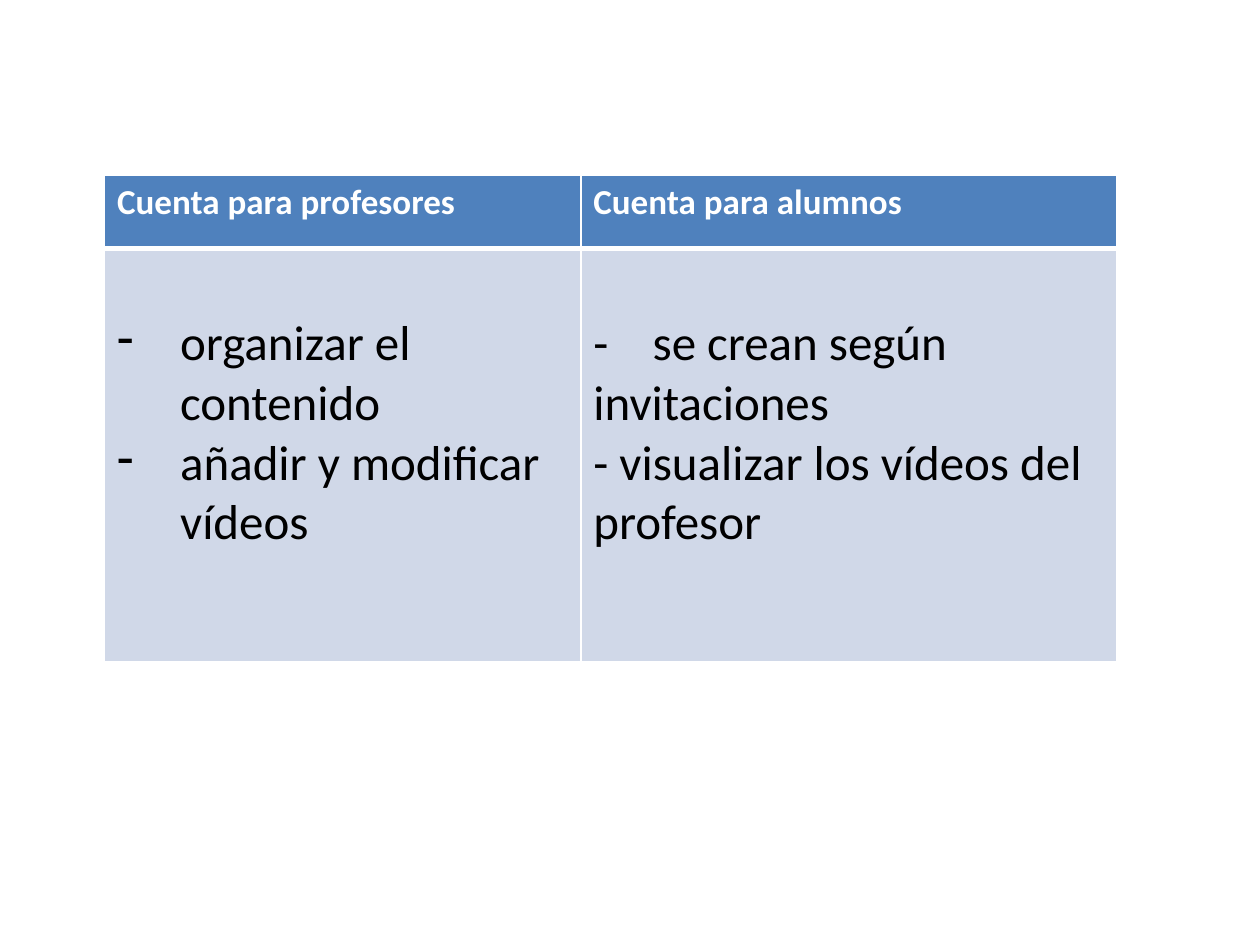
from lxml.etree import SubElement as Sub
from pptx import Presentation
from pptx.dml.color import RGBColor as Rgb
from pptx.oxml import parse_xml
from pptx.oxml.ns import qn, nsdecls
from pptx.util import Inches, Pt

HUE = {"head": "4F81BD", "body": "D0D8E8", "white": "FFFFFF", "black": "000000"}
COLS, ROWS = (3.78, 4.25), (0.58, 3.28)
HEADS = ["Cuenta para profesores", "Cuenta para alumnos"]
# Each item: text, kind of indent
LISTS = [
    [("organizar el contenido", "bullet"), ("añadir y modificar vídeos", "bullet")],
    [("-\tse crean según invitaciones", "tab"),
     ("- visualizar los vídeos del profesor", "plain")],
]
LOOKS = [
    {"fill": "head", "ink": "white", "top": 0.05, "edges": {"L": 1, "R": 1, "T": 1, "B": 3},
     "font": {"name": "Calibri", "size": Pt(20), "bold": True}},
    {"fill": "body", "ink": "black", "top": 0.52, "edges": {"L": 1, "R": 1, "T": 3, "B": 1},
     "font": {"name": "Calibri", "size": Pt(28), "bold": False}},
]


def edge(cell, sides):
    """Draw white cell borders, given widths in points by side."""
    props = cell._tc.get_or_add_tcPr()
    for i, (side, width) in enumerate(sides.items()):
        props.insert(i, parse_xml(
            f'<a:ln{side} {nsdecls("a")} w="{Pt(width)}"><a:solidFill>'
            f'<a:srgbClr val="{HUE["white"]}"/></a:solidFill></a:ln{side}>'))


def indent(para, kind):
    props = para._p.get_or_add_pPr()
    if kind == "bullet":
        props.set("marL", str(Inches(0.5)))
        props.set("indent", str(-Inches(0.5)))
        Sub(props, qn("a:buFontTx"))
        Sub(props, qn("a:buChar"), char="-")
    elif kind == "tab":
        tabs = Sub(props, qn("a:tabLst"))
        Sub(tabs, qn("a:tab"), pos=str(Inches(0.47)), algn="l")


deck = Presentation()
deck.slide_width, deck.slide_height = Inches(10), Inches(7.5)
slide = deck.slides.add_slide(deck.slide_layouts[6])
frame = slide.shapes.add_table(
    len(ROWS), len(COLS), Inches(0.83), Inches(1.39), Inches(sum(COLS)), Inches(sum(ROWS)))
table = frame.table
for col, width in zip(table.columns, COLS):
    col.width = Inches(width)
for row, height in zip(table.rows, ROWS):
    row.height = Inches(height)

grid = [[[(head, "plain")] for head in HEADS], LISTS]
for r, (line, look) in enumerate(zip(grid, LOOKS)):
    for c, items in enumerate(line):
        cell = table.cell(r, c)
        cell.margin_top = Inches(look["top"])
        cell.fill.solid()
        cell.fill.fore_color.rgb = Rgb.from_string(HUE[look["fill"]])
        edge(cell, look["edges"])
        text = cell.text_frame
        for i, (words, kind) in enumerate(items):
            para = text.add_paragraph() if i else text.paragraphs[0]
            indent(para, kind)
            run = para.add_run()
            run.text = words
            for key, value in look["font"].items():
                setattr(run.font, key, value)
            run.font.color.rgb = Rgb.from_string(HUE[look["ink"]])

deck.save("out.pptx")
